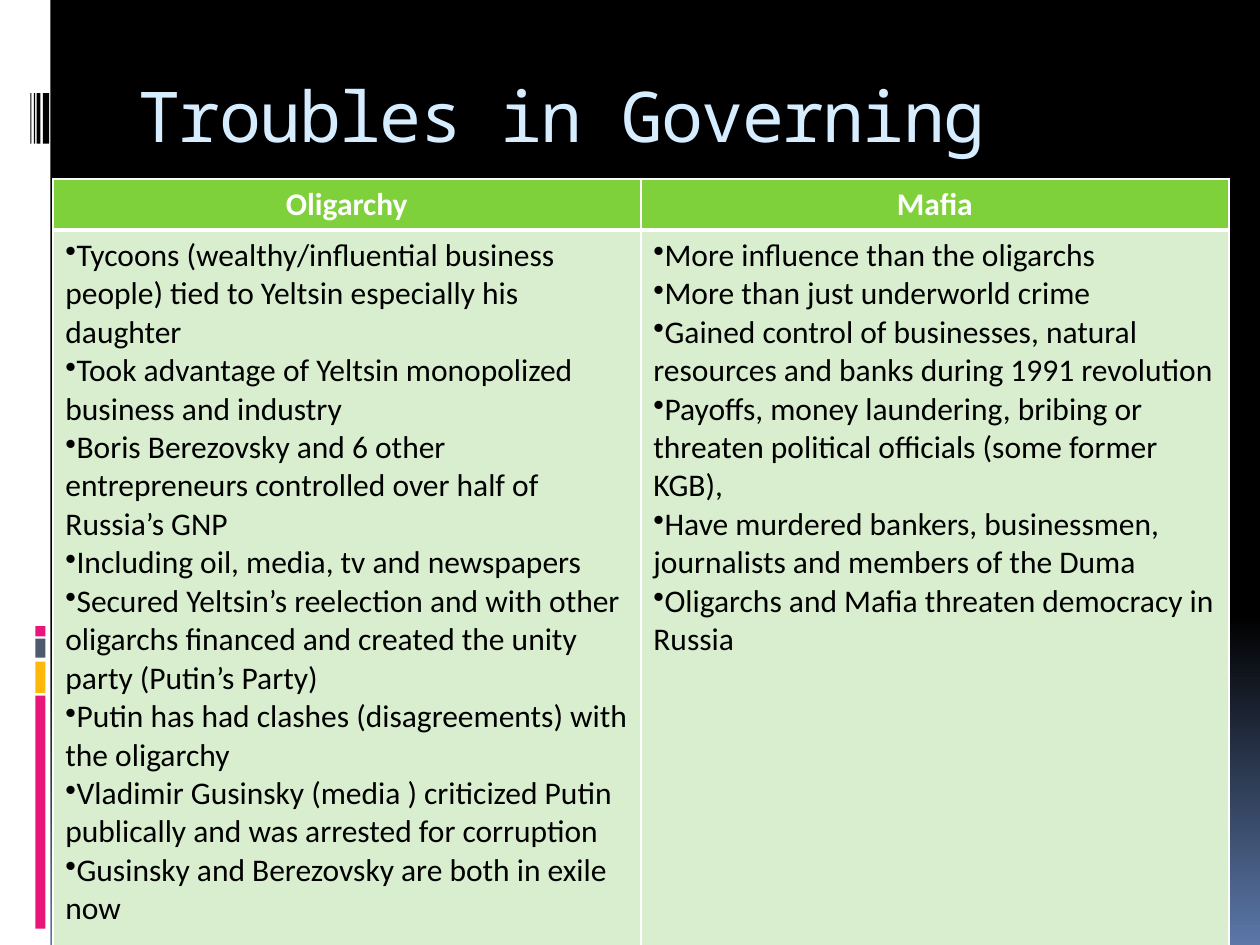
from lxml import etree
from pptx import Presentation
from pptx.dml.color import RGBColor
from pptx.enum import shapes, text
from pptx.oxml import ns
from pptx.util import Pt

HUES = {
    "white": "FFFFFF", "black": "000000", "pink": "EA157A", "gold": "FEB80A",
    "slate": "4E5B6F", "sky": "D6ECFF", "green": "7FD13B", "pale": "D8EECE",
    "dusk": "5B77A8",
}
# left, top, width, height, colour
BARS = [
    (0, 0, 28.8, 540, "white"),
    (20.2, 397.5, 5.8, 133.2, "pink"),
    (20.2, 378, 5.8, 18, "gold"),
    (20.2, 365, 5.8, 10.8, "slate"),
    (20.2, 357.8, 5.8, 5.8, "pink"),
    (24.5, 53.3, 3.6, 28.8, "black"),
    (20.9, 53.3, 2.2, 28.8, "black"),
    (19.4, 53.3, 0.7, 28.8, "black"),
    (17.3, 53.3, 0.7, 28.8, "black"),
]
TOPICS = {
    "Oligarchy": [
        "Tycoons (wealthy/influential business people) tied to Yeltsin especially his daughter",
        "Took advantage of Yeltsin monopolized business and industry",
        "Boris Berezovsky and 6 other entrepreneurs controlled over half of Russia’s GNP",
        "Including oil, media, tv and newspapers",
        "Secured Yeltsin’s reelection and with other oligarchs financed and created "
        "the unity party (Putin’s Party)",
        "Putin has had clashes (disagreements) with the oligarchy",
        "Vladimir Gusinsky (media ) criticized Putin publically and was arrested for corruption",
        "Gusinsky and Berezovsky are both in exile now",
    ],
    "Mafia": [
        "More influence than the oligarchs",
        "More than just underworld crime",
        "Gained control of businesses, natural resources and banks during 1991 revolution",
        "Payoffs, money laundering, bribing or threaten political officials (some former KGB),",
        "Have murdered bankers, businessmen, journalists and members of the Duma",
        "Oligarchs and Mafia threaten democracy in Russia",
    ],
}
TITLE = {"name": "Noto Sans Mono", "size": Pt(40), "bold": False}
HEAD = {"name": "Calibri", "size": Pt(18), "bold": True}
BODY = {**HEAD, "bold": False}


def rgb(hue):
    return RGBColor.from_string(HUES[hue])


def style(run, form, hue):
    for key, val in form.items():
        setattr(run.font, key, val)
    run.font.color.rgb = rgb(hue)


def paint(item, hue):
    item.fill.solid()
    item.fill.fore_color.rgb = rgb(hue)


def add_back(slide):
    fill = slide.background.fill
    fill.gradient()
    fill.gradient_angle = 270
    for stop, (place, hue) in zip(fill.gradient_stops, [(0.65, "black"), (1, "dusk")]):
        stop.position = place
        stop.color.rgb = rgb(hue)


def add_bar(slide, left, top, width, height, hue):
    bar = slide.shapes.add_shape(
        shapes.MSO_SHAPE.RECTANGLE, Pt(left), Pt(top), Pt(width), Pt(height))
    bar.shadow.inherit = False
    bar.line.fill.background()
    paint(bar, hue)


def set_title(slide, words):
    title = slide.shapes.title
    place = {"left": Pt(72), "top": Pt(40.3), "width": Pt(612), "height": Pt(72)}
    for key, val in place.items():
        setattr(title, key, val)
    frame = title.text_frame
    frame.vertical_anchor = text.MSO_ANCHOR.TOP
    frame.margin_top = Pt(1)
    para = frame.paragraphs[0]
    para.alignment = text.PP_ALIGN.LEFT
    run = para.add_run()
    run.text = words
    style(run, TITLE, "sky")
    run.font._element.set("spc", "-100")


def edge(cell, **widths):
    """Draw white borders; widths maps side letters L, R, T, B to points."""
    props = cell._tc.get_or_add_tcPr()
    for spot, (side, width) in enumerate(widths.items()):
        line = etree.Element(ns.qn("a:ln" + side), w=str(Pt(width)))
        fill = etree.SubElement(line, ns.qn("a:solidFill"))
        etree.SubElement(fill, ns.qn("a:srgbClr"), val=HUES["white"])
        props.insert(spot, line)


def fill_head(cell, words):
    paint(cell, "green")
    edge(cell, L=1, R=1, T=1, B=3)
    para = cell.text_frame.paragraphs[0]
    para.alignment = text.PP_ALIGN.CENTER
    run = para.add_run()
    run.text = words
    style(run, HEAD, "white")


def fill_list(cell, points):
    paint(cell, "pale")
    edge(cell, L=1, R=1, T=3, B=1)
    frame = cell.text_frame
    for num, words in enumerate(points):
        para = frame.add_paragraph() if num else frame.paragraphs[0]
        etree.SubElement(para._p.get_or_add_pPr(), ns.qn("a:buChar"), char="•")
        run = para.add_run()
        run.text = words
        style(run, BODY, "black")


def add_grid(slide, topics):
    rows = [29, 409]
    grid = slide.shapes.add_table(
        len(rows), len(topics), Pt(30.2), Pt(102.2), Pt(672), Pt(sum(rows))).table
    for row, height in zip(grid.rows, rows):
        row.height = Pt(height)
    for col, (head, points) in enumerate(topics.items()):
        fill_head(grid.cell(0, col), head)
        fill_list(grid.cell(1, col), points)


def main():
    deck = Presentation()
    deck.slide_width, deck.slide_height = Pt(720), Pt(540)
    slide = deck.slides.add_slide(deck.slide_layouts.get_by_name("Title Only"))
    add_back(slide)
    for bar in BARS:
        add_bar(slide, *bar)
    set_title(slide, "Troubles in Governing")
    add_grid(slide, TOPICS)
    deck.save("out.pptx")


if __name__ == "__main__":
    main()
